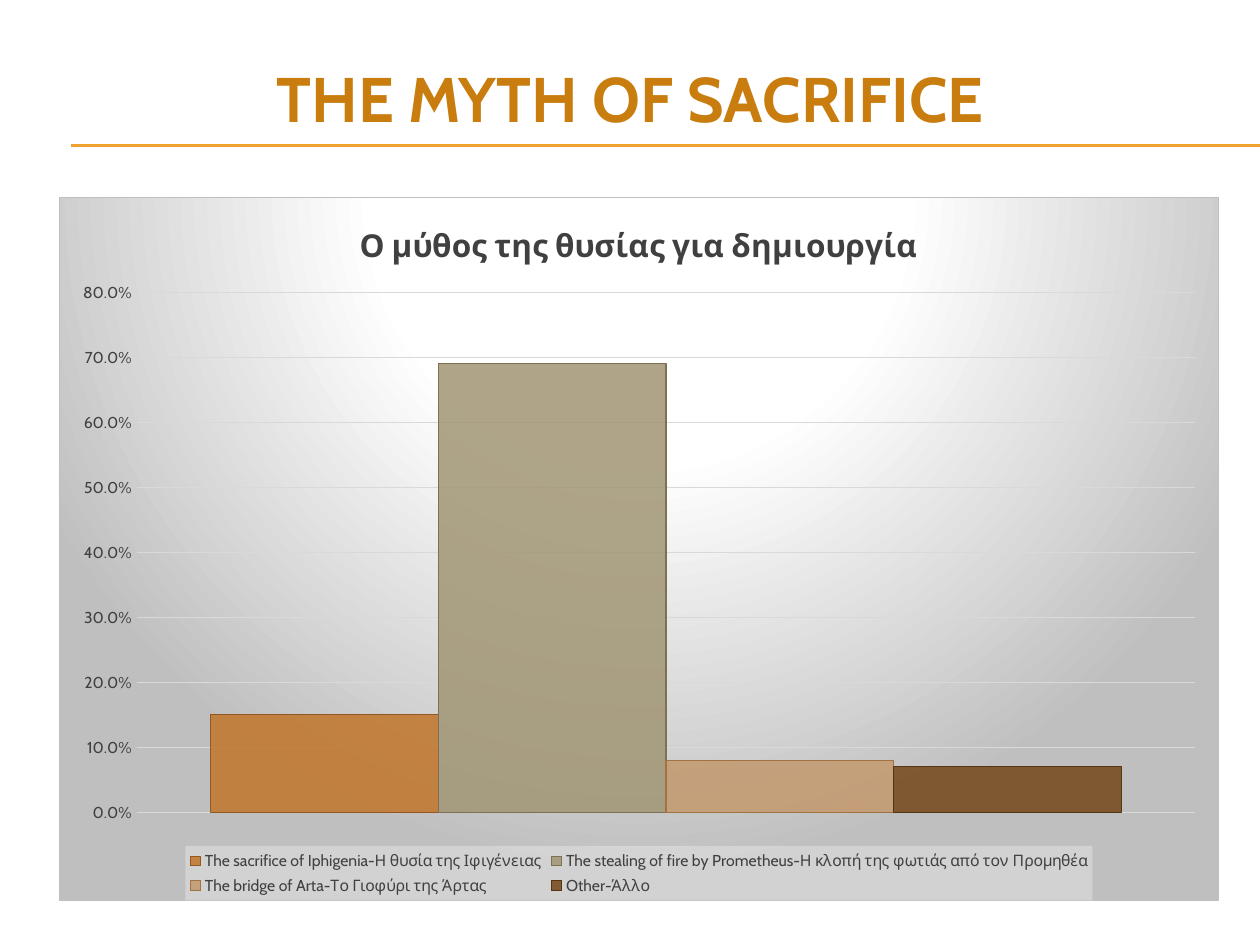
from lxml import etree
from pptx import Presentation
from pptx import util as u
from pptx.chart.data import CategoryChartData
from pptx.dml.color import RGBColor
from pptx.enum import chart as ch, shapes, text
from pptx.oxml import parse_xml
from pptx.oxml.ns import qn, nsdecls

# Content
TITLE = "THE MYTH OF SACRIFICE"
CHART_TITLE = "Ο μύθος της θυσίας για δημιουργία"
FONT = "Cabin"
SERIES = [  # name, value, fill, line
    ("The sacrifice of Iphigenia-Η θυσία της Ιφιγένειας", 0.15,
     RGBColor(0xC1, 0x75, 0x29), RGBColor(0x91, 0x58, 0x1F)),
    ("The stealing of fire by Prometheus-Η κλοπή της φωτιάς από τον Προμηθέα", 0.69,
     RGBColor(0xA1, 0x95, 0x74), RGBColor(0x7C, 0x71, 0x54)),
    ("The bridge of Arta-Το Γιοφύρι της Άρτας", 0.08,
     RGBColor(0xC3, 0x98, 0x6D), RGBColor(0xA2, 0x72, 0x42)),
    ("Other-Άλλο", 0.07,
     RGBColor(0x74, 0x46, 0x19), RGBColor(0x57, 0x35, 0x12)),
]
ORANGE = RGBColor(0xC8, 0x7D, 0x0E)
RULE = RGBColor(0xF0, 0xA2, 0x2E)
DARK = RGBColor(0x40, 0x40, 0x40)
GRID = RGBColor(0xD9, 0xD9, 0xD9)
CHART_W, CHART_H = 1160, 704
PLOT = {"x": 77 / CHART_W, "y": 95 / CHART_H,  # shares of the chart
        "w": 1060 / CHART_W, "h": 521 / CHART_H}

CHART_FILL = f"""<c:spPr {nsdecls('c', 'a')}>
  <a:gradFill><a:gsLst>
    <a:gs pos="0"><a:srgbClr val="FFFFFF"/></a:gs>
    <a:gs pos="39000"><a:srgbClr val="FFFFFF"/></a:gs>
    <a:gs pos="100000"><a:srgbClr val="BFBFBF"/></a:gs>
  </a:gsLst><a:path path="circle">
    <a:fillToRect l="50000" t="-80000" r="50000" b="180000"/>
  </a:path></a:gradFill>
  <a:ln w="9525"><a:solidFill><a:srgbClr val="BFBFBF"/></a:solidFill></a:ln>
</c:spPr>"""
LEGEND_FILL = f"""<c:spPr {nsdecls('c', 'a')}><a:solidFill>
  <a:srgbClr val="F2F2F2"><a:alpha val="39000"/></a:srgbClr>
</a:solidFill></c:spPr>"""


def px(n):
    return u.Emu(n * 914400 // 126)


def set_font(font, size, color, bold=False):
    font.name, font.size, font.bold = FONT, u.Pt(size), bold
    font.color.rgb = color


prs = Presentation()
prs.slide_width, prs.slide_height = px(1260), px(945)
s = prs.slides.add_slide(prs.slide_layouts[6])

# Double rule under the title
for y in (145, 146):
    line = s.shapes.add_connector(shapes.MSO_CONNECTOR.STRAIGHT,
                                  px(71), px(y), px(1260), px(y))
    line.line.color.rgb, line.line.width = RULE, u.Pt(0.75)
    etree.SubElement(line._element.spPr, qn("a:effectLst"))

# Title
tf = s.shapes.add_textbox(0, px(39), px(1260), px(116)).text_frame
tf.word_wrap = True
tf.vertical_anchor = text.MSO_ANCHOR.MIDDLE
p = tf.paragraphs[0]
p.text, p.alignment = TITLE, text.PP_ALIGN.CENTER
set_font(p.font, 36, ORANGE, True)

# Chart
data = CategoryChartData(number_format="0.0%")
data.categories = ["1"]
for name, value, _, _ in SERIES:
    data.add_series(name, [value])
chart = s.shapes.add_chart(ch.XL_CHART_TYPE.COLUMN_CLUSTERED, px(59), px(197),
                           px(CHART_W), px(CHART_H), data).chart
chart.font.name, chart.font.size = FONT, u.Pt(10)
chart._chartSpace.chart.addnext(parse_xml(CHART_FILL))

chart.has_title = True
p = chart.chart_title.text_frame.paragraphs[0]
p.text = CHART_TITLE
set_font(p.font, 18, DARK, True)
chart.chart_title.include_in_layout = False

# Columns
plot = chart.plots[0]
plot.gap_width, plot.overlap, plot.vary_by_categories = 65, 0, False
for series, (_, _, fill, edge) in zip(plot.series, SERIES):
    fmt = series.format
    fmt.fill.solid()
    fmt.fill.fore_color.rgb = fill
    color = fmt.fill._xPr.find(".//" + qn("a:srgbClr"))
    etree.SubElement(color, qn("a:alpha")).set("val", "85000")
    fmt.line.color.rgb, fmt.line.width = edge, u.Pt(0.75)

# Plot position
area = chart._chartSpace.chart.plotArea
for old in area.findall(qn("c:layout")):
    area.remove(old)
sides = "".join(f'<c:{k} val="{v:.4f}"/>' for k, v in PLOT.items())
area.insert(0, parse_xml(
    f'<c:layout {nsdecls("c")}><c:manualLayout><c:layoutTarget val="inner"/>'
    f'<c:xMode val="edge"/><c:yMode val="edge"/>{sides}</c:manualLayout></c:layout>'))

# Axes
chart.category_axis.visible = False
axis = chart.value_axis
axis.minimum_scale, axis.maximum_scale, axis.major_unit = 0, 0.8, 0.1
axis.major_tick_mark = axis.minor_tick_mark = ch.XL_TICK_MARK.NONE
axis.tick_labels.number_format = "0.0%"
axis.tick_labels.number_format_is_linked = False
set_font(axis.tick_labels.font, 9, DARK)
axis.format.line.fill.background()
grid = axis.major_gridlines.format.line
grid.color.rgb, grid.width = GRID, u.Pt(0.75)

# Legend
chart.has_legend = True
legend = chart.legend
legend.position = ch.XL_LEGEND_POSITION.BOTTOM
legend.include_in_layout = False
set_font(legend.font, 9, DARK)
legend._element.find(qn("c:overlay")).addnext(parse_xml(LEGEND_FILL))

prs.save("out.pptx")
